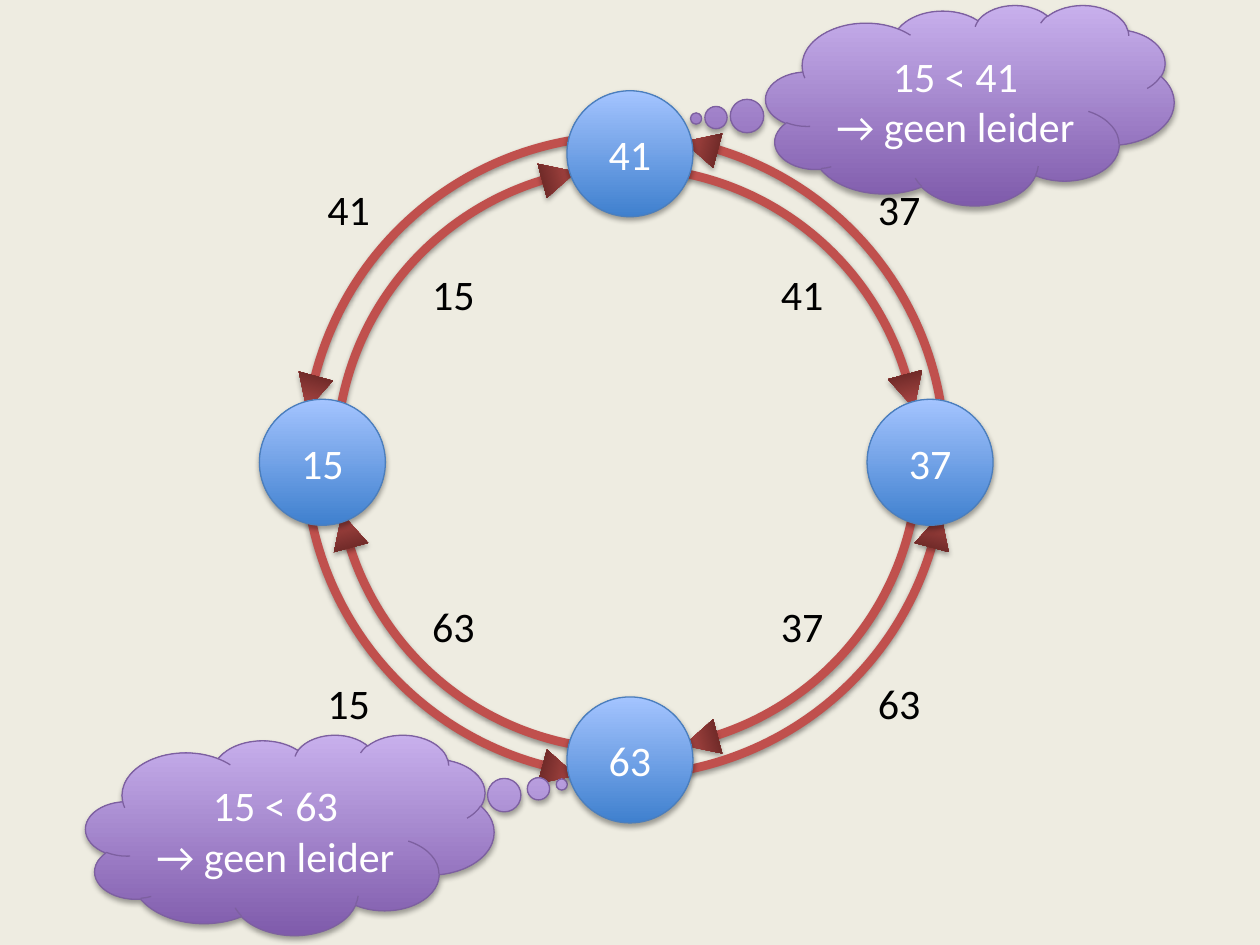
from lxml.etree import SubElement
from pptx import Presentation
from pptx.dml.color import RGBColor
from pptx.enum.shapes import MSO_SHAPE
from pptx.enum.text import MSO_ANCHOR, MSO_AUTO_SIZE, PP_ALIGN
from pptx.oxml.ns import qn
from pptx.util import Cm, Pt

THEME = {
    "bg": "EEECE1", "font": "Calibri", "size": 24,
    "label": "000000", "light": "FFFFFF",
    "arc": "C0504D", "arc_width": 5, "outline_width": 0.75,
    "head": ("C0504D", "632523"),
    "node": ("3F80CE", "A4C4FF"), "node_line": "4B7EBC",
    "cloud": ("7F5BAB", "C8B0ED"), "cloud_line": "7D60A0",
}


def write(tf, text, color, align=None):
    for i, line in enumerate(text.split("\n")):
        p = tf.paragraphs[0] if i == 0 else tf.add_paragraph()
        p.alignment = align
        r = p.add_run()
        r.text = line
        r.font.name, r.font.size = THEME["font"], Pt(THEME["size"])
        r.font.color.rgb = RGBColor.from_string(color)


def add_shape(shapes, kind, x, y, w, h, grad=None, angle=90, line=None,
              width=THEME["outline_width"], rot=0, adj=(), text=None,
              alpha=35, dist=1.8):
    sp = shapes.add_shape(kind, Cm(x), Cm(y), Cm(w), Cm(h))
    sp.rotation = rot
    for i, value in enumerate(adj):
        sp.adjustments[i] = value
    if grad:
        sp.fill.gradient()
        sp.fill.gradient_angle = angle
        for stop, color, pos in zip(sp.fill.gradient_stops, grad, (0, 1)):
            stop.color.rgb = RGBColor.from_string(color)
            stop.position = pos
    else:
        sp.fill.background()
    if line:
        sp.line.color.rgb = RGBColor.from_string(line)
        sp.line.width = Pt(width)
    else:
        sp.line.fill.background()
    # Soft shadow straight below the shape
    effects = SubElement(sp._element.spPr, qn("a:effectLst"))
    shadow = SubElement(effects, qn("a:outerShdw"), blurRad=str(Pt(3.1)),
                        dist=str(Pt(dist)), dir="5400000", rotWithShape="0")
    black = SubElement(shadow, qn("a:srgbClr"), val="000000")
    SubElement(black, qn("a:alpha"), val=str(alpha * 1000))
    if text:
        sp.text_frame.word_wrap = True
        sp.text_frame.vertical_anchor = MSO_ANCHOR.MIDDLE
        write(sp.text_frame, text, THEME["light"], PP_ALIGN.CENTER)
    return sp


prs = Presentation()
prs.slide_width, prs.slide_height = Cm(25.4), Cm(19.05)
s = prs.slides.add_slide(prs.slide_layouts[6])
s.background.fill.solid()
s.background.fill.fore_color.rgb = RGBColor.from_string(THEME["bg"])

# Rings: left, top, diameter, and the label columns and rows beside them
RINGS = {
    "inner": (6.78, 3.38, 11.73, {"left": 8.46, "right": 15.49},
              {"top": 5.28, "bottom": 11.99}),
    "outer": (6.15, 2.74, 12.9, {"left": 6.35, "right": 17.45},
              {"top": 3.58, "bottom": 13.54}),
}

# Messages: ring, arc degrees, arrowhead x, y and rotation, label quadrant
MESSAGES = {
    "15": [("inner", 189.64, 255.4, 10.92, 3.2, 75, "left", "top"),
           ("outer", 103.31, 169.16, 10.92, 15.19, 105, "left", "bottom")],
    "37": [("inner", 10.41, 73.82, 13.77, 14.58, 255, "right", "bottom"),
           ("outer", 284.86, 351.52, 13.77, 2.59, 285, "right", "top")],
    "41": [("outer", 193.02, 261.03, 5.92, 7.57, 195, "left", "top"),
           ("inner", 280.46, 345.09, 17.98, 7.54, 165, "right", "top")],
    "63": [("inner", 99.82, 164.42, 6.63, 10.34, 345, "left", "bottom"),
           ("outer", 14.89, 79.4, 18.52, 10.34, 15, "right", "bottom")],
}
ARC_UNIT = 0.6  # adjustment value per degree
HEAD = 0.71

for number, arrows in MESSAGES.items():
    shapes = s.shapes.add_group_shape().shapes
    for ring, start, end, hx, hy, rot, side, level in arrows:
        x, y, d, columns, rows = RINGS[ring]
        add_shape(shapes, MSO_SHAPE.ARC, x, y, d, d, line=THEME["arc"],
                  width=THEME["arc_width"], alpha=38, dist=1.6,
                  adj=(start * ARC_UNIT, end * ARC_UNIT))
        add_shape(shapes, MSO_SHAPE.ISOSCELES_TRIANGLE, hx, hy, HEAD, HEAD,
                  grad=THEME["head"], angle=270, rot=rot)
        tb = shapes.add_textbox(Cm(columns[side]), Cm(rows[level]),
                                Cm(1.37), Cm(1.27))
        tb.text_frame.word_wrap = False
        tb.text_frame.auto_size = MSO_AUTO_SIZE.SHAPE_TO_FIT_TEXT
        write(tb.text_frame, number, THEME["label"])

# Thought clouds
for x, y, tail, comparison in [(1.73, 14.81, (0.666, -0.251), "15 < 63"),
                               (15.44, 0.1, (-0.671, 0.067), "15 < 41")]:
    add_shape(s.shapes, MSO_SHAPE.CLOUD_CALLOUT, x, y, 8.23, 4.04,
              grad=THEME["cloud"], line=THEME["cloud_line"], adj=tail,
              text=comparison + "\n→ geen leider")

# Nodes
for number, x, y in [("41", 11.43, 1.83), ("63", 11.43, 14.05),
                     ("37", 17.48, 8.05), ("15", 5.23, 8.05)]:
    add_shape(s.shapes, MSO_SHAPE.OVAL, x, y, 2.54, 2.54, grad=THEME["node"],
              line=THEME["node_line"], text=number)

prs.save("out.pptx")
